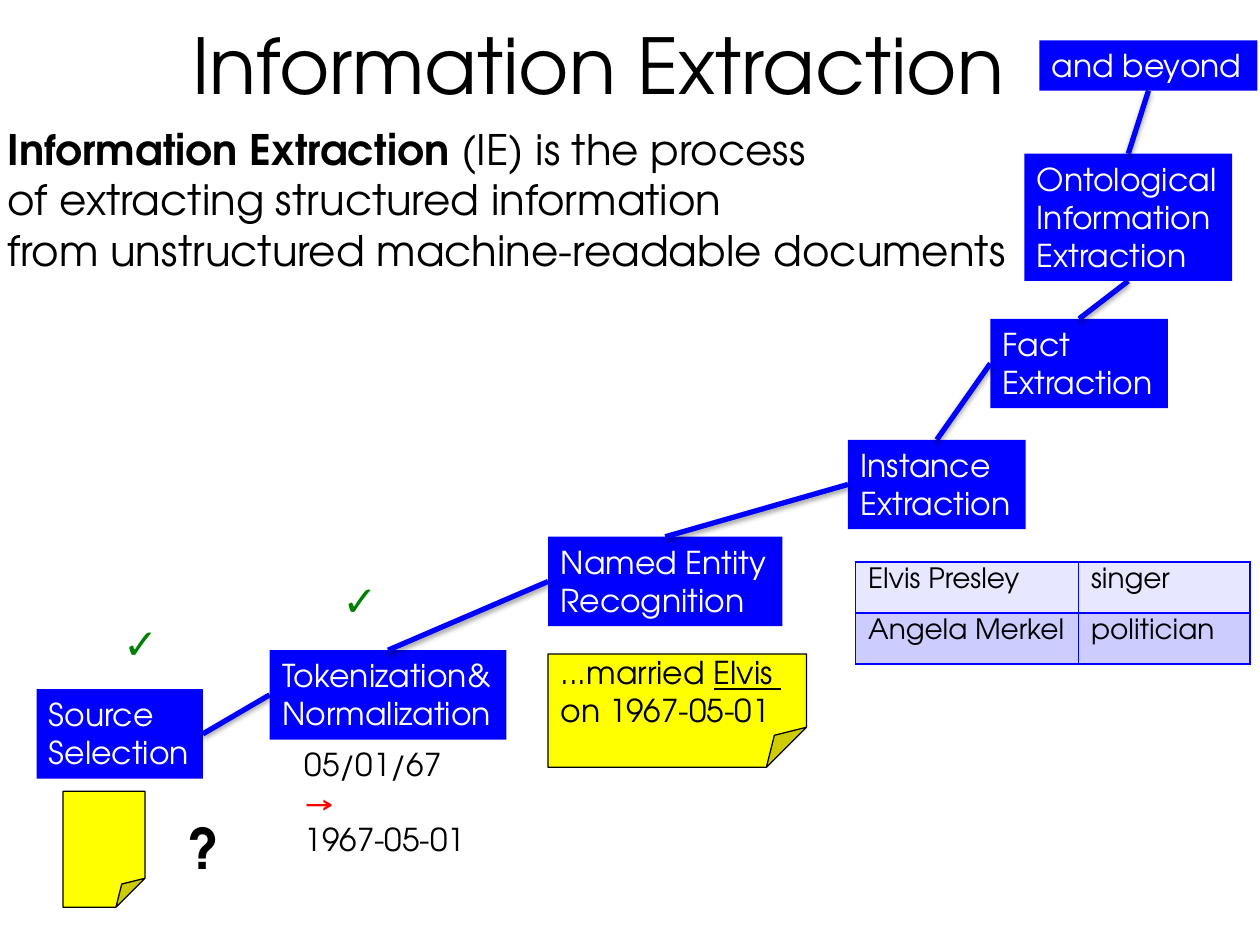
import pptx
import pptx.util
import pptx.dml.color
import pptx.enum.shapes
import pptx.enum.text
import lxml.etree

Inches, Pt = pptx.util.Inches, pptx.util.Pt
RGB = pptx.dml.color.RGBColor
Kind = pptx.enum.shapes.MSO_SHAPE
Anchor = pptx.enum.text.MSO_ANCHOR

BLUE = RGB(0, 0, 255)
EDGE = "0001FF"
YELLOW = RGB(255, 255, 0)
BLACK = RGB(0, 0, 0)
WHITE = RGB(255, 255, 255)
RED = RGB(255, 0, 0)
GREEN = RGB(0, 128, 0)
BANDS = RGB(0xE7, 0xE7, 0xFF), RGB(0xCC, 0xCC, 0xFF)
FACE = "TeX Gyre Adventor"
NS = "http://schemas.openxmlformats.org/drawingml/2006/main"
TOP, LEFT, BOTTOM, RIGHT = range(4)

# text, box, side where the line leaves, side where it enters the next step
STEPS = [
    ("Source\nSelection", (0.29, 5.47, 1.32, 0.71), RIGHT, LEFT),
    ("Tokenization&\nNormalization", (2.14, 5.16, 1.88, 0.71), TOP, LEFT),
    ("Named Entity\nRecognition", (4.35, 4.26, 1.86, 0.71), TOP, LEFT),
    ("Instance\nExtraction", (6.73, 3.49, 1.41, 0.71), TOP, LEFT),
    ("Fact\nExtraction", (7.86, 2.53, 1.41, 0.71), TOP, BOTTOM),
    ("Ontological\nInformation\nExtraction", (8.13, 1.22, 1.65, 1.01), TOP, BOTTOM),
    ("and beyond", (8.25, 0.32, 1.73, 0.4), None, None),
]
FACTS = [("Elvis Presley", "singer"), ("Angela Merkel", "politician")]


def place(box):
    return [Inches(v) for v in box]


def style(frame, size, color, face=FACE, bold=None):
    for para in frame.paragraphs:
        para.alignment = pptx.enum.text.PP_ALIGN.LEFT
        font = para.font
        font.name, font.size, font.bold = face, Pt(size), bold
        font.color.rgb = color


def label(slide, text, box, size=18, color=BLACK, wrap=False, **look):
    frame = slide.shapes.add_textbox(*place(box)).text_frame
    frame.word_wrap = wrap
    frame.text = text
    style(frame, size, color, **look)
    return frame


def block(slide, kind, box, fill):
    shape = slide.shapes.add_shape(kind, *place(box))
    shape.shadow.inherit = False
    shape.fill.solid()
    shape.fill.fore_color.rgb = fill
    shape.line.fill.background()
    return shape


def step(slide, text, box):
    shape = block(slide, Kind.RECTANGLE, box, BLUE)
    frame = shape.text_frame
    frame.word_wrap = False
    frame.vertical_anchor = Anchor.TOP
    frame.text = text
    style(frame, 18, WHITE)
    return shape


def note(slide, box):
    """Yellow sheet with a folded corner."""
    shape = block(slide, Kind.FOLDED_CORNER, box, YELLOW)
    shape.line.color.rgb = BLACK
    shape.line.width = Pt(0.75)
    geom = shape._element.spPr.find(f"{{{NS}}}prstGeom")
    for old in list(geom):
        geom.remove(old)
    fold = lxml.etree.SubElement(geom, f"{{{NS}}}avLst")
    lxml.etree.SubElement(fold, f"{{{NS}}}gd", name="adj", fmla="val 35300")
    return shape.text_frame


def link(slide, start, out, end, into):
    line = slide.shapes.add_connector(
        pptx.enum.shapes.MSO_CONNECTOR.STRAIGHT, 0, 0, 0, 0)
    line.begin_connect(start, out)
    line.end_connect(end, into)
    line.line.color.rgb = BLUE
    line.line.width = Pt(3)
    line._element.spPr.append(lxml.etree.fromstring(
        f'<a:effectLst xmlns:a="{NS}"><a:outerShdw blurRad="40000" dist="20000" '
        'dir="5400000" rotWithShape="0"><a:srgbClr val="000000">'
        '<a:alpha val="38000"/></a:srgbClr></a:outerShdw></a:effectLst>'))


def border(cell):
    props = cell._tc.get_or_add_tcPr()
    for n, side in enumerate(("lnL", "lnR", "lnT", "lnB")):
        props.insert(n, lxml.etree.fromstring(
            f'<a:{side} xmlns:a="{NS}" w="12700"><a:solidFill>'
            f'<a:srgbClr val="{EDGE}"/></a:solidFill></a:{side}>'))


def grid(slide, rows, box, widths):
    table = slide.shapes.add_table(len(rows), len(widths), *place(box)).table
    for col, width in zip(table.columns, widths):
        col.width = Inches(width)
    for r, (row, fill) in enumerate(zip(rows, BANDS)):
        for c, text in enumerate(row):
            cell = table.cell(r, c)
            cell.text = text
            cell.fill.solid()
            cell.fill.fore_color.rgb = fill
            style(cell.text_frame, 16, BLACK)
            border(cell)


def head(slide, text):
    title = slide.shapes.title
    title.left, title.top, title.width, title.height = place((0.25, 0, 9, 1.01))
    frame = title.text_frame
    frame.text = text
    frame.vertical_anchor = Anchor.MIDDLE
    style(frame, 44, BLACK)
    frame.paragraphs[0].alignment = pptx.enum.text.PP_ALIGN.CENTER


def main():
    deck = pptx.Presentation()
    deck.slide_width, deck.slide_height = Inches(10), Inches(7.5)
    slide = deck.slides.add_slide(deck.slide_layouts[5])
    head(slide, "Information Extraction")

    boxes = [step(slide, text, box) for text, box, *_ in STEPS]
    for start, end, (*_, out, into) in zip(boxes, boxes[1:], STEPS):
        link(slide, start, out, end, into)

    note(slide, (0.5, 6.28, 0.65, 0.92))
    label(slide, "?", (1.4, 6.41, 0.45, 0.64), 32, bold=True)
    dates = label(slide, "05/01/67\n→\n1967-05-01", (2.32, 5.86, 1.49, 1.01))
    dates.paragraphs[1].font.color.rgb = RED
    for spot in ((0.88, 4.85), (2.62, 4.51)):
        label(slide, "✓", (*spot, 0.47, 0.5), 24, GREEN, face="Arial", bold=True)

    quote = note(slide, (4.35, 5.19, 2.05, 0.9))
    quote.word_wrap = True
    quote.vertical_anchor = Anchor.MIDDLE
    quote.text = "...married \non 1967-05-01"
    name = quote.paragraphs[0].add_run()
    name.text = "Elvis "
    name.font.underline = True
    style(quote, 18, BLACK)

    grid(slide, FACTS, (6.79, 4.46, 3.13, 0.81), (1.77, 1.36))

    intro = label(slide, "\nof extracting structured information\n"
                  "from unstructured machine-readable documents",
                  (-0.04, 0.93, 8.8, 1.31), 24, wrap=True)
    for text, bold in (("Information Extraction", True),
                       (" (IE) is the process", False)):
        run = intro.paragraphs[0].add_run()
        run.text, run.font.bold = text, bold

    deck.save("out.pptx")


if __name__ == "__main__":
    main()
